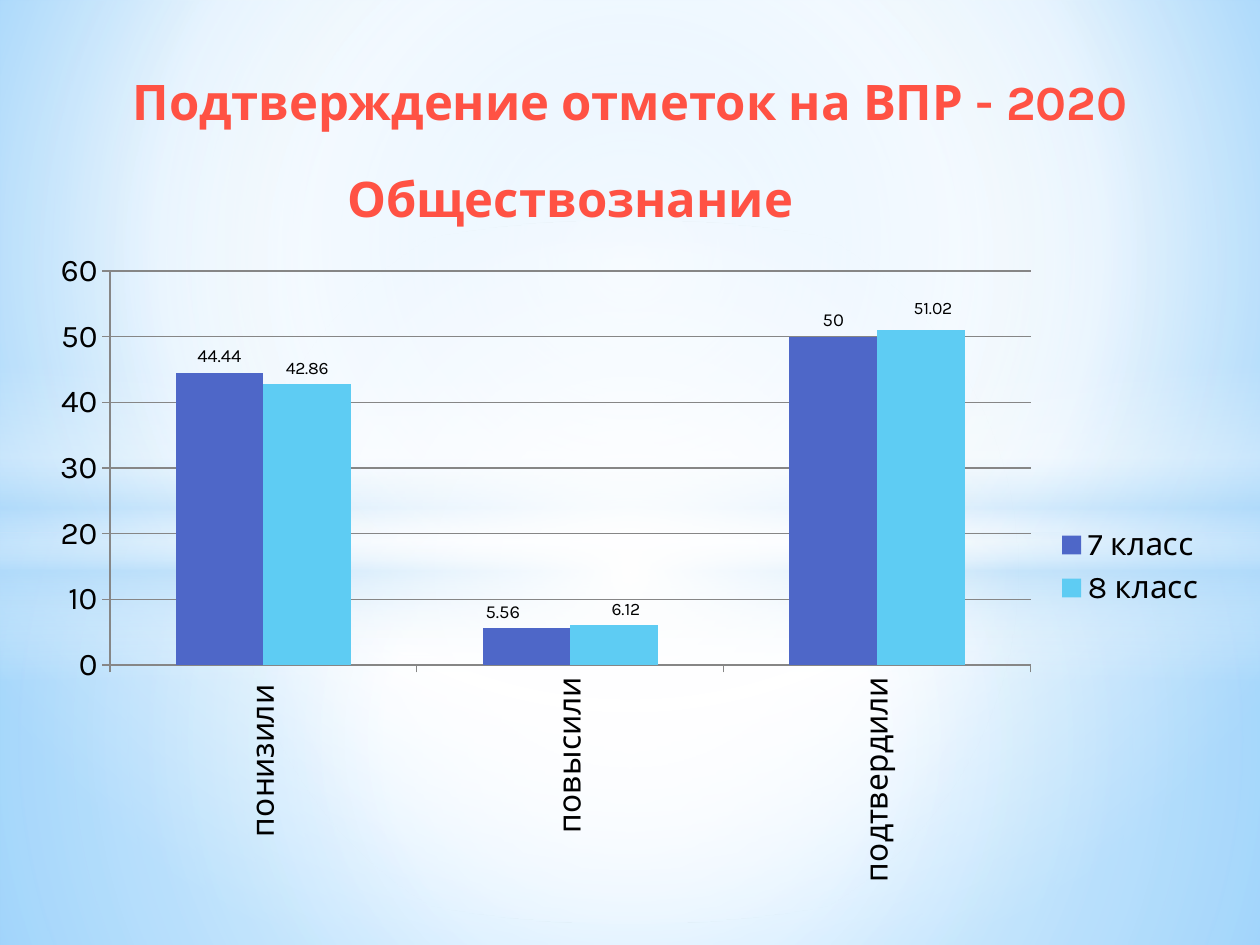
from dataclasses import dataclass
from typing import NamedTuple

from lxml.etree import SubElement
from pptx import Presentation
from pptx.chart.data import CategoryChartData
from pptx.dml.color import RGBColor
from pptx.enum.chart import XL_CHART_TYPE, XL_LABEL_POSITION, XL_LEGEND_POSITION, XL_TICK_MARK
from pptx.enum.shapes import MSO_SHAPE
from pptx.enum.text import MSO_ANCHOR, MSO_AUTO_SIZE, PP_ALIGN
from pptx.oxml.ns import qn
from pptx.util import Inches, Pt

WIDTH, HEIGHT = Inches(10), Inches(7.5)


@dataclass(frozen=True)
class Theme:
    font: str = "Karla"
    title: str = "FF5244"
    text: str = "000000"
    axis: str = "868686"
    white: str = "FFFFFF"
    haze: str = "B4DCFA"
    title_size: float = 28
    chart_size: float = 18


THEME = Theme()


class Area(NamedTuple):
    """Left, top, width and height as shares of the slide."""
    left: float
    top: float
    width: float
    height: float

    def lengths(self) -> tuple:
        return (int(self.left * WIDTH), int(self.top * HEIGHT),
                int(self.width * WIDTH), int(self.height * HEIGHT))


class Stop(NamedTuple):
    position: int
    color: str
    opacity: int = 100


class Glow(NamedTuple):
    outline: MSO_SHAPE
    area: Area
    stops: list
    focus: tuple | None = (50, 50, 50, 50)  # None: runs from top to bottom


class Series(NamedTuple):
    name: str
    values: tuple
    color: str
    label_size: float
    label_shifts: dict  # point index: shift as shares of the chart


class Heading(NamedTuple):
    text: str
    area: Area


BACKDROP = [Stop(0, "9ED5FF"), Stop(60, THEME.white), Stop(100, "5BB9FF")]
GLOWS = [
    Glow(MSO_SHAPE.RECTANGLE, Area(0, 0.564, 1, 0.436),
         [Stop(0, THEME.white, 91), Stop(37, THEME.white, 76), Stop(100, THEME.haze, 79)]),
    Glow(MSO_SHAPE.RECTANGLE, Area(0, 0, 1, 0.564),
         [Stop(0, THEME.white, 89), Stop(48, THEME.white, 62), Stop(100, THEME.haze, 79)]),
    Glow(MSO_SHAPE.RECTANGLE, Area(0, 0.387, 1, 0.333),
         [Stop(0, THEME.white, 0), Stop(29, THEME.white, 30), Stop(45, THEME.haze, 40),
          Stop(55, THEME.white, 26), Stop(65, THEME.haze, 60), Stop(100, THEME.white, 0)], None),
    Glow(MSO_SHAPE.OVAL, Area(0, 0.233, 1, 0.744),
         [Stop(0, THEME.white), Stop(54, THEME.white, 0)]),
]
HEADINGS = [
    Heading("Подтверждение отметок на ВПР - 2020", Area(0.067, 0.069, 0.866, 0.076)),
    Heading("Обществознание", Area(0.177, 0.172, 0.551, 0.076)),
]
CHART_AREA = Area(0.031, 0.252, 0.937, 0.695)
PLOT_LAYOUT = {"x": 0.06, "y": 0.05, "w": 0.78, "h": 0.6}
CATEGORIES = ["понизили ", "повысили", "подтвердили"]
SERIES = [
    Series("7 класс", (44.44, 5.56, 50), "4E67C8", 10.5, {1: {"x": -0.02, "y": 0}}),
    Series("8 класс", (42.86, 6.12, 51.02), "5ECCF3", 10,
           {1: {"x": 0.01, "y": 0}, 2: {"x": 0.01, "y": -0.01}}),
]


def set_gradient(properties, stops: list, focus: tuple | None) -> None:
    """Swap the solid fill of a properties element for a gradient."""
    solid = properties.find(qn("a:solidFill"))
    gradient = solid.makeelement(qn("a:gradFill"), {"rotWithShape": "1"})
    properties.replace(solid, gradient)
    stop_list = SubElement(gradient, qn("a:gsLst"))
    for stop in stops:
        mark = SubElement(stop_list, qn("a:gs"), pos=str(stop.position * 1000))
        color = SubElement(mark, qn("a:srgbClr"), val=stop.color)
        if stop.opacity < 100:
            SubElement(color, qn("a:alpha"), val=str(stop.opacity * 1000))
    if focus is None:
        SubElement(gradient, qn("a:lin"), ang="5400000", scaled="0")
    else:
        course = SubElement(gradient, qn("a:path"), path="circle")
        SubElement(course, qn("a:fillToRect"),
                   {side: str(share * 1000) for side, share in zip("ltrb", focus)})


def set_font(font, size: float, color: str, bold: bool = False) -> None:
    formats = {"name": THEME.font, "size": Pt(size), "bold": bold}
    for name, value in formats.items():
        setattr(font, name, value)
    font.color.rgb = RGBColor.from_string(color)


def set_line(line) -> None:
    line.color.rgb = RGBColor.from_string(THEME.axis)
    line.width = Pt(0.75)


def add_glow(page, glow: Glow) -> None:
    shape = page.shapes.add_shape(glow.outline, *glow.area.lengths())
    shape.shadow.inherit = False
    shape.line.fill.background()
    shape.fill.solid()
    shape.fill.fore_color.rgb = RGBColor.from_string(THEME.white)
    set_gradient(shape.element.spPr, glow.stops, glow.focus)


def add_heading(page, heading: Heading) -> None:
    frame = page.shapes.add_textbox(*heading.area.lengths()).text_frame
    formats = {"word_wrap": True, "auto_size": MSO_AUTO_SIZE.SHAPE_TO_FIT_TEXT,
               "vertical_anchor": MSO_ANCHOR.TOP}
    for name, value in formats.items():
        setattr(frame, name, value)
    para = frame.paragraphs[0]
    para.alignment = PP_ALIGN.CENTER
    span = para.add_run()
    span.text = heading.text
    set_font(span.font, THEME.title_size, THEME.title, bold=True)


def fill_layout(layout, values: dict) -> None:
    manual = SubElement(layout, qn("c:manualLayout"))
    for name, value in values.items():
        SubElement(manual, qn(f"c:{name}"), val=str(value))


def style_series(drawn, series: Series) -> None:
    drawn.format.fill.solid()
    drawn.format.fill.fore_color.rgb = RGBColor.from_string(series.color)
    labels = drawn.data_labels
    labels.show_value = True
    labels.position = XL_LABEL_POSITION.OUTSIDE_END
    set_font(labels.font, series.label_size, THEME.text)
    for index, shift in series.label_shifts.items():
        label = drawn.points[index].data_label
        set_font(label.font, series.label_size, THEME.text)
        label.position = XL_LABEL_POSITION.OUTSIDE_END
    for element in drawn.data_labels._element.findall(qn("c:dLbl")):
        mark = element.find(qn("c:idx"))
        layout = element.makeelement(qn("c:layout"), {})
        mark.addnext(layout)
        fill_layout(layout, series.label_shifts[int(mark.get("val"))])


def add_marks_chart(page) -> None:
    data = CategoryChartData()
    data.categories = CATEGORIES
    for series in SERIES:
        data.add_series(series.name, series.values)
    chart = page.shapes.add_chart(
        XL_CHART_TYPE.COLUMN_CLUSTERED, *CHART_AREA.lengths(), data).chart
    set_font(chart.font, THEME.chart_size, THEME.text)
    chart.has_title = False
    chart.has_legend = True
    chart.legend.position = XL_LEGEND_POSITION.RIGHT
    chart.legend.include_in_layout = False

    # Columns and their labels
    plot = chart.plots[0]
    for name, value in {"gap_width": 150, "overlap": 0, "vary_by_categories": False}.items():
        setattr(plot, name, value)
    for drawn, series in zip(plot.series, SERIES):
        style_series(drawn, series)

    # Axes
    for axis in (chart.category_axis, chart.value_axis):
        axis.major_tick_mark = XL_TICK_MARK.OUTSIDE
        set_line(axis.format.line)
        set_font(axis.tick_labels.font, THEME.chart_size, THEME.text)
    category_text = chart.category_axis.tick_labels.font
    category_text.bold = False
    body = chart.element.find(f".//{qn('c:catAx')}/{qn('c:txPr')}/{qn('a:bodyPr')}")
    body.set("rot", "-5400000")
    body.set("vert", "horz")
    scale = {"minimum_scale": 0, "maximum_scale": 60, "major_unit": 10,
             "has_major_gridlines": True}
    for name, value in scale.items():
        setattr(chart.value_axis, name, value)
    set_line(chart.value_axis.major_gridlines.format.line)

    # Plot area
    area = chart.element.find(f".//{qn('c:plotArea')}")
    layout = area.find(qn("c:layout"))
    if layout is None:
        layout = area.makeelement(qn("c:layout"), {})
        area.insert(0, layout)
    fill_layout(layout, {"layoutTarget": "inner", "xMode": "edge", "yMode": "edge"} | PLOT_LAYOUT)


def main() -> None:
    deck = Presentation()
    deck.slide_width, deck.slide_height = WIDTH, HEIGHT
    page = deck.slides.add_slide(deck.slide_layouts[6])

    # Backdrop
    page.background.fill.solid()
    page.background.fill.fore_color.rgb = RGBColor.from_string(THEME.white)
    set_gradient(page.element.find(f".//{qn('p:bgPr')}"), BACKDROP, (20, 10, 20, 60))
    for glow in GLOWS:
        add_glow(page, glow)

    # Content
    add_marks_chart(page)
    for heading in HEADINGS:
        add_heading(page, heading)
    deck.save("out.pptx")


if __name__ == "__main__":
    main()
